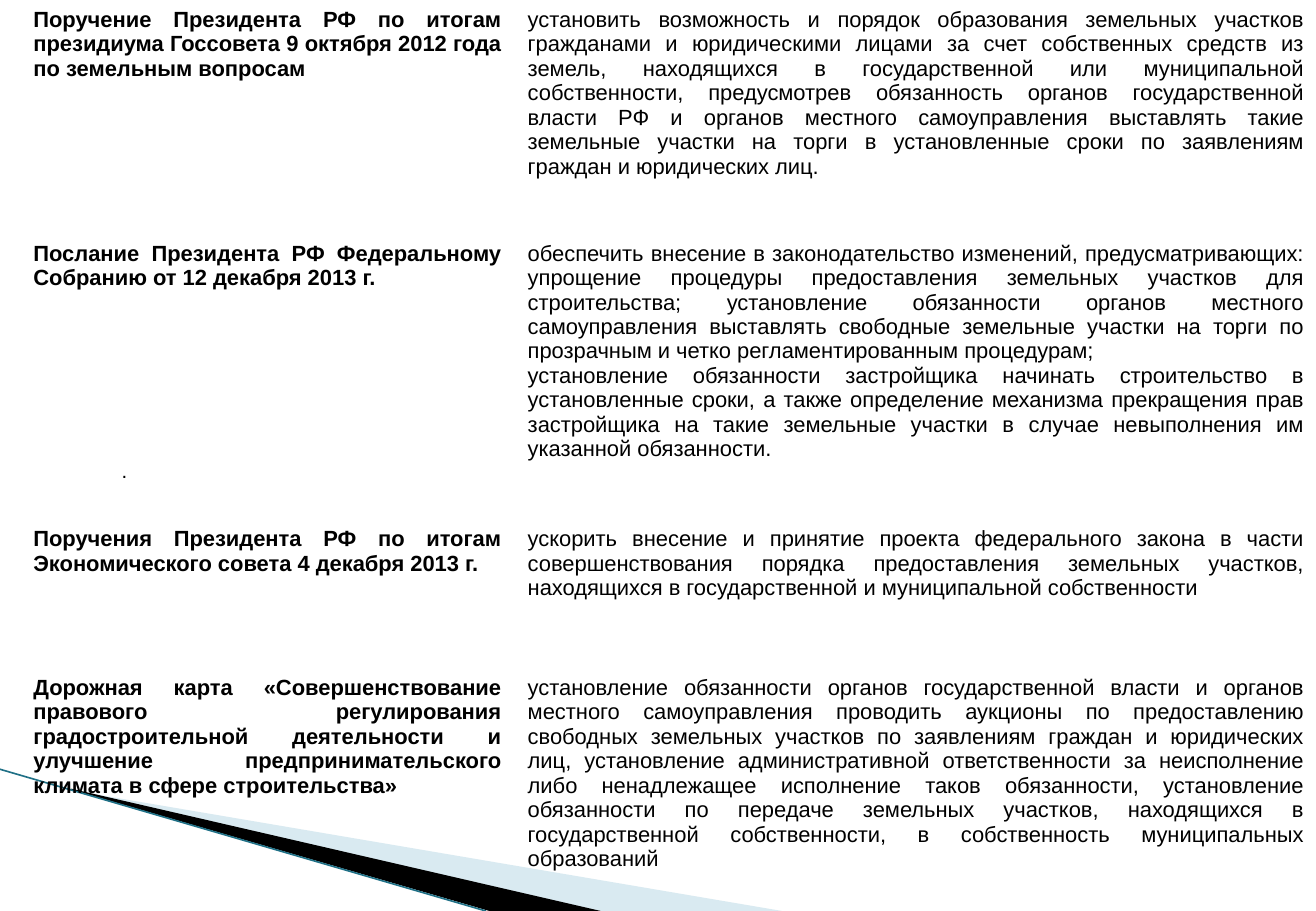
"""Build a slide listing the land-policy instructions and what each one requires."""
from lxml import etree
from pptx import Presentation
from pptx.dml.color import RGBColor
from pptx.enum.text import PP_ALIGN
from pptx.oxml.ns import qn
from pptx.util import Pt

JUSTIFY = PP_ALIGN.JUSTIFY
BLACK = RGBColor(0x00, 0x00, 0x00)
LIGHT_BLUE = RGBColor(0xA0, 0xCB, 0xDC)
TEAL = RGBColor(0x1F, 0x70, 0x86)
NO_GRID_STYLE = "{2D5ABB26-0587-4C30-8999-92F81FD0307C}"
BLANK_LAYOUT = 6

INSTRUCTIONS = [
    ("Поручение Президента РФ по итогам президиума Госсовета 9 октября 2012 года "
     "по земельным вопросам",
     ["установить возможность и порядок образования земельных участков гражданами и "
      "юридическими лицами за счет собственных средств из земель, находящихся в "
      "государственной или муниципальной собственности, предусмотрев обязанность органов "
      "государственной власти РФ и органов местного самоуправления выставлять такие "
      "земельные участки на торги в установленные сроки по заявлениям граждан и "
      "юридических лиц."]),
    ("Послание Президента РФ Федеральному Собранию от 12 декабря 2013 г.",
     ["обеспечить внесение в законодательство изменений, предусматривающих: упрощение "
      "процедуры предоставления земельных участков для строительства; установление "
      "обязанности органов местного самоуправления выставлять свободные земельные участки "
      "на торги по прозрачным и четко регламентированным процедурам;",
      "установление обязанности застройщика начинать строительство в установленные сроки, "
      "а также определение механизма прекращения прав застройщика на такие земельные "
      "участки в случае невыполнения им указанной обязанности."]),
    ("Поручения Президента РФ по итогам Экономического совета 4 декабря 2013 г.",
     ["ускорить внесение и принятие проекта федерального закона в части "
      "совершенствования порядка предоставления земельных участков, находящихся в "
      "государственной и муниципальной собственности"]),
    ("Дорожная карта «Совершенствование правового регулирования градостроительной "
     "деятельности и улучшение предпринимательского климата в сфере строительства»",
     ["установление обязанности органов государственной власти и органов местного "
      "самоуправления проводить аукционы по предоставлению свободных земельных участков "
      "по заявлениям граждан и юридических лиц, установление административной "
      "ответственности за неисполнение либо ненадлежащее исполнение таков обязанности, "
      "установление обязанности по передаче земельных участков, находящихся в "
      "государственной собственности, в собственность муниципальных образований"]),
]
TABLE_LEFT, TABLE_TOP = -7, -13.5
COLUMN_WIDTHS = [18.5, 293, 475.5]
ROW_HEIGHTS = [153, 169.5, 88, 141]
FIRST_ROW_TOP_MARGIN = 18
WEDGES = [
    (LIGHT_BLUE, 40, [(42.5, 468.5), (463.5, 540), (355.5, 540), (42.5, 468)]),
    (BLACK, 100, [(42, 467.5), (356, 540), (290, 540), (42, 468)]),
]
EDGE = (0, 456, 288, 540)
TEXT_FORMAT = {"name": "Arial", "size": Pt(13)}


def set_format(target, values):
    for name, value in values.items():
        setattr(target, name, value)


def write_paragraphs(text_frame, texts, **font_values):
    for index, text in enumerate(texts):
        paragraph = text_frame.paragraphs[0] if index == 0 else text_frame.add_paragraph()
        paragraph.alignment = JUSTIFY
        run = paragraph.add_run()
        run.text = text
        set_format(run.font, {**TEXT_FORMAT, **font_values})
        run.font.color.rgb = BLACK


def add_wedge(slide, color, opacity, points):
    corners = [(Pt(x), Pt(y)) for x, y in points]
    builder = slide.shapes.build_freeform(*corners[0])
    builder.add_line_segments(corners[1:], close=True)
    wedge = builder.convert_to_shape()
    wedge.shadow.inherit = False
    wedge.line.fill.background()
    wedge.fill.solid()
    wedge.fill.fore_color.rgb = color
    if opacity < 100:
        color_element = wedge.fill._xPr.find(qn("a:solidFill"))[0]
        etree.SubElement(color_element, qn("a:alpha"), val=str(opacity * 1000))


def add_edge(slide):
    edge = slide.shapes.add_connector(1, *map(Pt, EDGE))
    edge.line.color.rgb = TEAL
    edge.line.width = Pt(0.95)
    etree.SubElement(edge._element.spPr, qn("a:effectLst"))


def add_dot(slide):
    text_frame = slide.shapes.add_textbox(Pt(65), Pt(264), Pt(657), Pt(38)).text_frame
    text_frame.word_wrap = True
    write_paragraphs(text_frame, ["."], size=Pt(12))
    text_frame.paragraphs[0].line_spacing = 1.3


def add_instructions(slide):
    frame = slide.shapes.add_table(
        len(ROW_HEIGHTS), len(COLUMN_WIDTHS), Pt(TABLE_LEFT), Pt(TABLE_TOP),
        Pt(sum(COLUMN_WIDTHS)), Pt(sum(ROW_HEIGHTS)))
    table = frame.table
    set_format(table, {"first_row": False, "horz_banding": False})
    table._tbl.tblPr.find(qn("a:tableStyleId")).text = NO_GRID_STYLE
    for column, width in zip(table.columns, COLUMN_WIDTHS):
        column.width = Pt(width)
    for index, (source, requirements) in enumerate(INSTRUCTIONS):
        table.rows[index].height = Pt(ROW_HEIGHTS[index])
        margins = {"margin_left": Pt(8), "margin_right": Pt(8), "margin_bottom": Pt(3.5),
                   "margin_top": Pt(3.5 if index else FIRST_ROW_TOP_MARGIN)}
        for cell in table.rows[index].cells:
            cell.fill.background()
            set_format(cell, margins)
        write_paragraphs(table.cell(index, 1).text_frame, [source], bold=True)
        write_paragraphs(table.cell(index, 2).text_frame, requirements, bold=False)


def main():
    presentation = Presentation()
    set_format(presentation, {"slide_width": Pt(780), "slide_height": Pt(540)})
    slide = presentation.slides.add_slide(presentation.slide_layouts[BLANK_LAYOUT])
    for wedge in WEDGES:
        add_wedge(slide, *wedge)
    add_edge(slide)
    add_dot(slide)
    add_instructions(slide)
    presentation.save("out.pptx")


if __name__ == "__main__":
    main()
